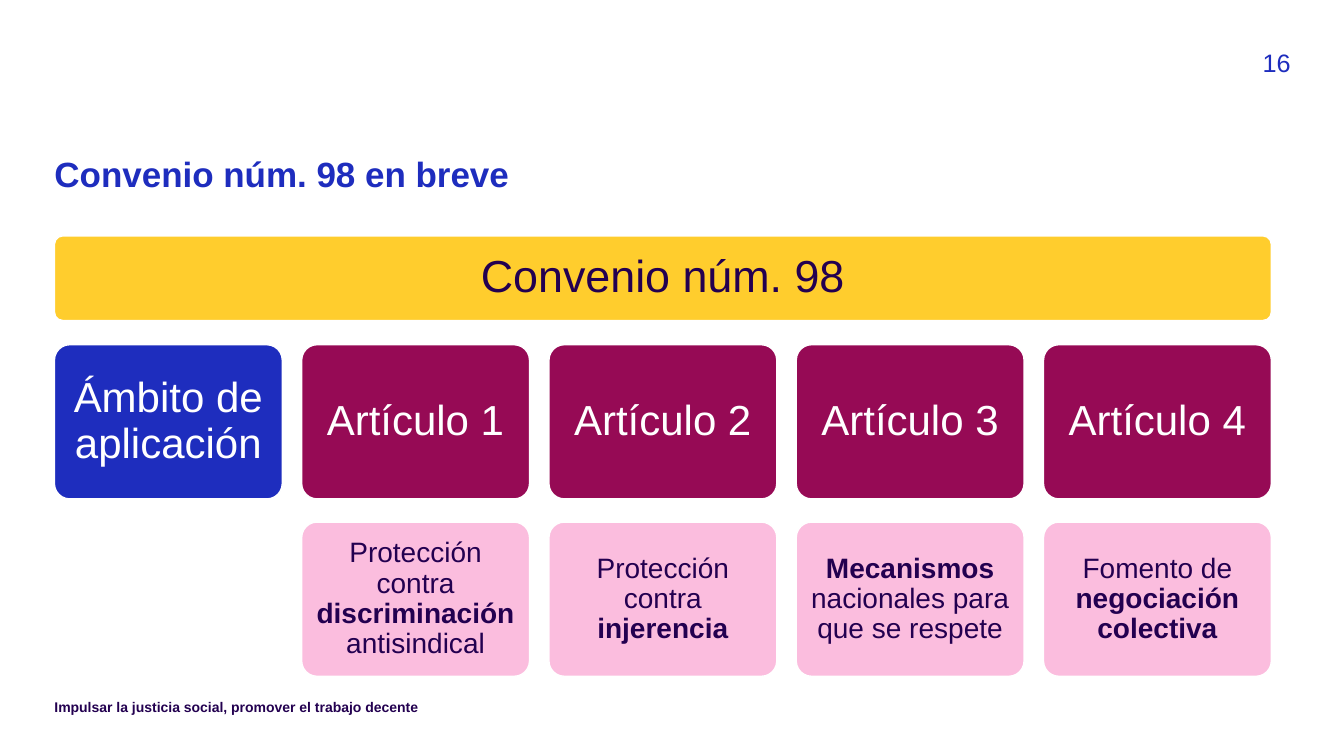
from pptx import Presentation
from pptx.dml.color import RGBColor
from pptx.enum.shapes import MSO_SHAPE
from pptx.enum.text import MSO_ANCHOR, PP_ALIGN
from pptx.util import Inches, Pt

ROUND = MSO_SHAPE.ROUNDED_RECTANGLE
MIDDLE = MSO_ANCHOR.MIDDLE
LEFT, CENTER, RIGHT = PP_ALIGN.LEFT, PP_ALIGN.CENTER, PP_ALIGN.RIGHT

WHITE = RGBColor(0xFF, 0xFF, 0xFF)
BLUE = RGBColor(0x1E, 0x2D, 0xBE)
PURPLE = RGBColor(0x23, 0x00, 0x50)
YELLOW = RGBColor(0xFF, 0xCD, 0x2D)
WINE = RGBColor(0x96, 0x0A, 0x55)
PINK = RGBColor(0xFB, 0xBD, 0xDE)

deck = Presentation()
deck.slide_width, deck.slide_height = Inches(13.33), Inches(7.5)
slide = deck.slides.add_slide(deck.slide_layouts[6])


def write(shape, text, size, color, align, inset=0, bold=False, spacing=0.9):
    """Fill a shape with one paragraph; parts between asterisks are bold."""
    frame = shape.text_frame
    frame.word_wrap = True
    frame.margin_left = frame.margin_right = Inches(inset)
    frame.margin_top = frame.margin_bottom = Inches(inset)
    para = frame.paragraphs[0]
    para.alignment = align
    para.line_spacing = spacing
    para.font.name = "Arial"
    para.font.size = Pt(size)
    para.font.color.rgb = color
    para.font.bold = bold
    for i, part in enumerate(text.split("*")):
        if part:
            run = para.add_run()
            run.text = part
            if i % 2:
                run.font.bold = True


def add_card(left, top, width, height, fill, text, size, color, inset):
    card = slide.shapes.add_shape(
        ROUND, Inches(left), Inches(top), Inches(width), Inches(height))
    card.adjustments[0] = 0.1
    card.shadow.inherit = False
    card.fill.solid()
    card.fill.fore_color.rgb = fill
    card.line.color.rgb = WHITE
    card.line.width = Pt(1)
    card.text_frame.vertical_anchor = MIDDLE
    write(card, text, size, color, CENTER, inset)


# Footer, page number and title
labels = [
    (0.54, 6.93, 6.13, 0.2, "Impulsar la justicia social, promover el trabajo decente",
     10, PURPLE, LEFT, True, 1.0),
    (12.21, 0.47, 0.59, 0.31, "16", 18, BLUE, RIGHT, False, 1.0),
    (0.54, 1.56, 11.31, 0.79, "Convenio núm. 98 en breve", 25, BLUE, LEFT, True, 0.9),
]
for left, top, width, height, text, size, color, align, bold, spacing in labels:
    box = slide.shapes.add_textbox(
        Inches(left), Inches(top), Inches(width), Inches(height))
    write(box, text, size, color, align, bold=bold, spacing=spacing)

# Banner across all columns
START, SPAN = 0.54, 12.07
add_card(START, 2.34, SPAN, 0.84, YELLOW, "Convenio núm. 98", 32, PURPLE, 0.13)

# Columns: heading card and, below it, its content
columns = [
    ("Ámbito de aplicación", BLUE, None),
    ("Artículo 1", WINE, "Protección contra *discriminación* antisindical"),
    ("Artículo 2", WINE, "Protección contra *injerencia*"),
    ("Artículo 3", WINE, "*Mecanismos* nacionales para que se respete"),
    ("Artículo 4", WINE, "Fomento de *negociación colectiva*"),
]
WIDTH, HEIGHT = 2.26, 1.53
step = (SPAN - WIDTH) / (len(columns) - 1)
for i, (head, fill, body) in enumerate(columns):
    left = START + i * step
    add_card(left, 3.42, WIDTH, HEIGHT, fill, head, 30, WHITE, 0.12)
    if body:
        add_card(left, 5.18, WIDTH, HEIGHT, PINK, body, 20, PURPLE, 0.08)

deck.save("out.pptx")
